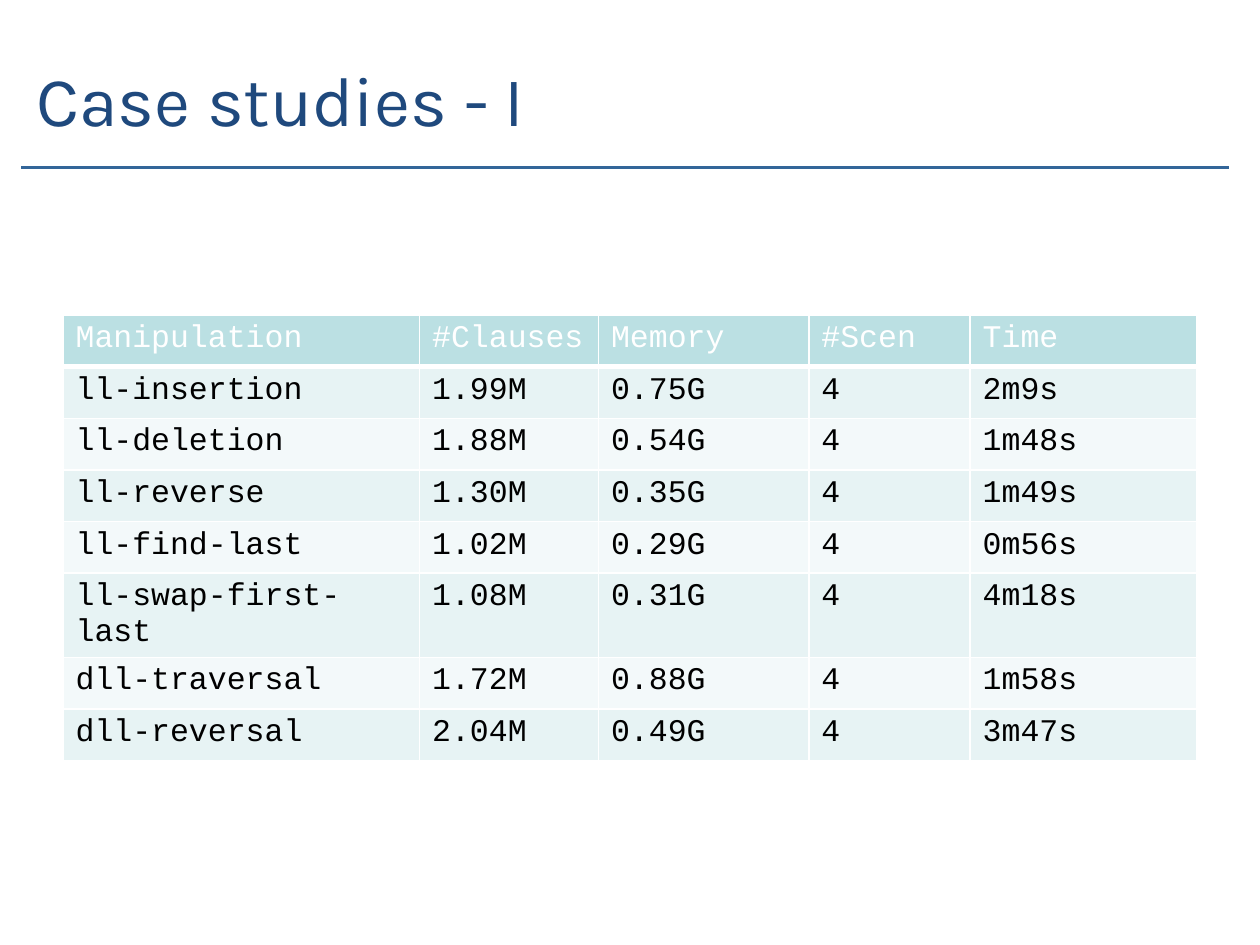
"""Build the case studies slide: a title, a rule and a table of results."""
from lxml.etree import SubElement
from pptx import Presentation
from pptx.dml.color import RGBColor
from pptx.enum.shapes import MSO_CONNECTOR
from pptx.enum.text import MSO_ANCHOR, PP_ALIGN
from pptx.oxml.ns import qn
from pptx.util import Inches, Pt

TITLE = "Case studies - I"
HEADER = ("Manipulation", "#Clauses", "Memory", "#Scen", "Time")
RESULTS = [
    ("ll-insertion", "1.99M", "0.75G", "4", "2m9s"),
    ("ll-deletion", "1.88M", "0.54G", "4", "1m48s"),
    ("ll-reverse", "1.30M", "0.35G", "4", "1m49s"),
    ("ll-find-last", "1.02M", "0.29G", "4", "0m56s"),
    ("ll-swap-first-last", "1.08M", "0.31G", "4", "4m18s"),
    ("dll-traversal", "1.72M", "0.88G", "4", "1m58s"),
    ("dll-reversal", "2.04M", "0.49G", "4", "3m47s"),
]
COL_WIDTHS = (2.83, 1.42, 1.67, 1.28, 1.8)
ROW_HEIGHT = 0.41

NAVY = RGBColor(0x1F, 0x49, 0x7D)
RULE_BLUE = RGBColor(0x33, 0x66, 0x99)
WHITE = RGBColor(0xFF, 0xFF, 0xFF)
BLACK = RGBColor(0, 0, 0)
HEADER_FILL = RGBColor(0xBB, 0xE0, 0xE3)
BAND_FILLS = (RGBColor(0xE7, 0xF3, 0xF4), RGBColor(0xF3, 0xF9, 0xFA))


def write(tf, text, font="Courier New", size=18, color=BLACK):
    p = tf.paragraphs[0]
    p.alignment = PP_ALIGN.LEFT
    r = p.add_run()
    r.text = text
    r.font.name = font
    r.font.size = Pt(size)
    r.font.bold = False
    r.font.color.rgb = color


def set_borders(cell, bottom=1):
    tc_pr = cell._tc.get_or_add_tcPr()
    for side, width in (("L", 1), ("R", 1), ("T", 1), ("B", bottom)):
        ln = SubElement(tc_pr, qn(f"a:ln{side}"), w=str(Pt(width)))
        fill = SubElement(ln, qn("a:solidFill"))
        SubElement(fill, qn("a:srgbClr"), val=str(WHITE))


def add_title(s):
    sp = s.shapes.title
    sp.left, sp.top = Inches(0.19), Inches(0.18)
    sp.width, sp.height = Inches(9), Inches(1.2)
    sp.text_frame.vertical_anchor = MSO_ANCHOR.MIDDLE
    write(sp.text_frame, TITLE, font="Karla", size=40, color=NAVY)


def add_rule(s):
    y = Inches(1.33)
    rule = s.shapes.add_connector(MSO_CONNECTOR.STRAIGHT, Inches(0.17), y, Inches(9.75), y)
    rule.line.color.rgb = RULE_BLUE
    rule.line.width = Pt(2)
    SubElement(rule._element.spPr, qn("a:effectLst"))


def add_results(s):
    rows = [HEADER, *RESULTS]
    table = s.shapes.add_table(
        len(rows), len(HEADER), Inches(0.5), Inches(2.5),
        Inches(sum(COL_WIDTHS)), Inches(ROW_HEIGHT * len(rows))).table
    for col, width in zip(table.columns, COL_WIDTHS):
        col.width = Inches(width)
    for i, row in enumerate(rows):
        table.rows[i].height = Inches(ROW_HEIGHT)
        is_header = i == 0
        for j, text in enumerate(row):
            cell = table.cell(i, j)
            set_borders(cell, bottom=3 if is_header else 1)
            cell.fill.solid()
            cell.fill.fore_color.rgb = HEADER_FILL if is_header else BAND_FILLS[(i - 1) % 2]
            write(cell.text_frame, text, color=WHITE if is_header else BLACK)


def main():
    prs = Presentation()
    prs.slide_width, prs.slide_height = Inches(10), Inches(7.5)
    s = prs.slides.add_slide(prs.slide_layouts[5])
    add_rule(s)
    add_title(s)
    add_results(s)
    prs.save("out.pptx")


if __name__ == "__main__":
    main()
